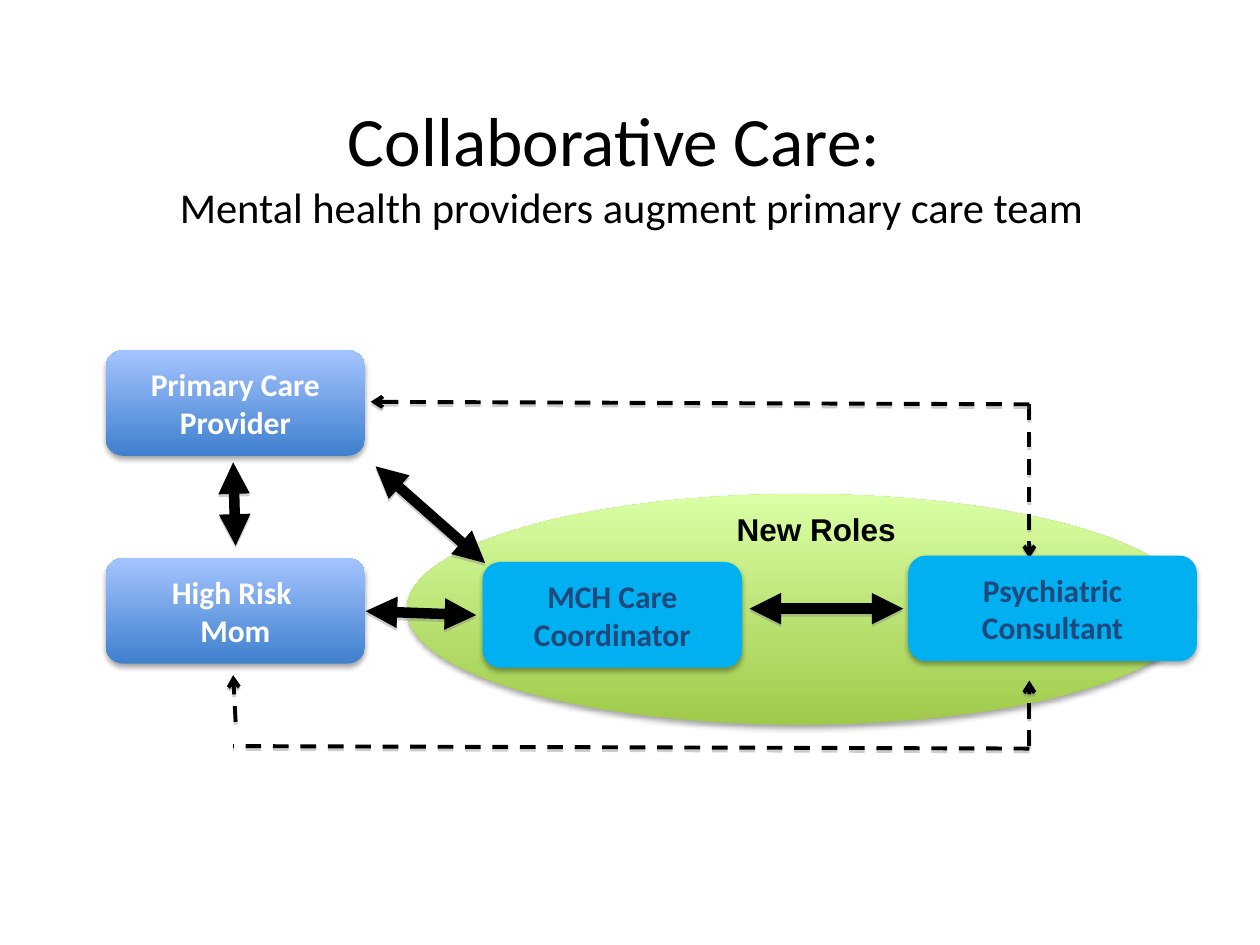
"""Build the collaborative care slide: a care team diagram with new roles."""
from lxml import etree
from pptx import Presentation, util as u
from pptx.dml.color import RGBColor
from pptx.enum import dml, shapes, text
from pptx.oxml import ns

HUES = {
    "ink": "000000", "white": "FFFFFF", "navy": "1F497D", "cyan": "00B0F0",
    "blue": ("3F80CE", "A4C4FF"), "green": ("A0CA4A", "DAFFA5"),
    "shade": "000000", "gray": "808080",
}
TITLE = [("Collaborative Care:", 39.6, 0.7),
         ("Mental health providers augment primary care team", 24.3, 0)]
TITLE_AT = (1.3, 1.73, 22.86, 3.18)
OVAL = (8.2, 9.96, 15.88, 4.65)
LABEL = ("New Roles", (14.6, 10.16, 4.01, 1.02))
WIDE, HIGH = 5.23, 2.13
BOXES = [
    ("Primary Care\nProvider", 2.13, 7.06, WIDE, "blue", "white"),
    ("High Risk \nMom", 2.13, 11.25, WIDE, "blue", "white"),
    ("MCH Care\nCoordinator", 9.73, 11.33, WIDE, "cyan", "navy"),
    ("Psychiatric Consultant", 18.31, 11.2, 5.82, "cyan", "navy"),
]
BACK = [
    ("thick", 7.57, 9.4, 9.78, 11.35),
    ("dash", 20.75, 8.15, 20.75, 11.25),
]
FRONT = [
    ("dash", 20.75, 8.15, 7.47, 8.1),
    ("thick", 4.75, 11, 4.7, 9.32),
    ("thick", 7.37, 12.32, 9.6, 12.4),
    ("thick", 15.11, 12.27, 18.21, 12.27),
    ("dash", 20.75, 15.04, 20.75, 13.72),
    ("plain", 20.75, 15.09, 4.7, 15.04),
    ("dash", 4.75, 14.55, 4.7, 13.61),
]
ENDS = {
    "thick": {"headEnd": "triangle", "tailEnd": "triangle"},
    "dash": {"tailEnd": "arrow"},
    "plain": {},
}


def rgb(name):
    return RGBColor.from_string(HUES[name])


def cms(vals):
    return [u.Cm(v) for v in vals]


def sub(node, tag, **atts):
    return etree.SubElement(node, ns.qn("a:" + tag), **atts)


def shade(item, hue, alpha, blur, dist):
    root = sub(item._element.spPr, "effectLst")
    cast = sub(root, "outerShdw", blurRad=str(u.Pt(blur)), dist=str(u.Pt(dist)),
               dir="5400000", rotWithShape="0")
    tint = sub(cast, "srgbClr", val=HUES[hue])
    sub(tint, "alpha", val=str(alpha * 1000))


def style(para, size, hue, face="Calibri", bold=False):
    for run in para.runs:
        font = run.font
        font.name, font.size, font.bold = face, u.Pt(size), bold
        font.color.rgb = rgb(hue)


def add_form(slide, kind, spot, hue):
    form = slide.shapes.add_shape(kind, *cms(spot))
    if isinstance(HUES[hue], tuple):
        form.fill.gradient()
        form.fill.gradient_angle = 90
        for stop, code, pos in zip(form.fill.gradient_stops, HUES[hue], (0, 1)):
            stop.color.rgb = RGBColor.from_string(code)
            stop.position = pos
    else:
        form.fill.solid()
        form.fill.fore_color.rgb = rgb(hue)
    form.line.fill.background()
    shade(form, "shade", 35, 3.1, 1.8)
    return form


def add_box(slide, words, left, top, wide, hue, ink):
    kind = shapes.MSO_SHAPE.ROUNDED_RECTANGLE
    frame = add_form(slide, kind, (left, top, wide, HIGH), hue).text_frame
    frame.text = words
    frame.word_wrap = True
    frame.vertical_anchor = text.MSO_ANCHOR.MIDDLE
    for para in frame.paragraphs:
        para.alignment = text.PP_ALIGN.CENTER
        style(para, 18, ink, bold=True)


def add_line(slide, kind, *ends):
    link = slide.shapes.add_connector(shapes.MSO_CONNECTOR.STRAIGHT, *cms(ends))
    line = link.line
    line.color.rgb = rgb("ink")
    line.width = u.Pt(6 if kind == "thick" else 2.25)
    if kind != "thick":
        line.dash_style = dml.MSO_LINE.DASH
    for tag, tip in ENDS[kind].items():
        sub(line._get_or_add_ln(), tag, type=tip)
    shade(link, "gray", 38, 0, 1.6)


def add_title(slide):
    frame = slide.shapes.add_textbox(*cms(TITLE_AT)).text_frame
    frame.word_wrap = True
    frame.vertical_anchor = text.MSO_ANCHOR.MIDDLE
    frame.text = "\n".join(row[0] for row in TITLE)
    for para, (_, size, inset) in zip(frame.paragraphs, TITLE):
        para.alignment = text.PP_ALIGN.CENTER
        para._p.get_or_add_pPr().set("marR", str(u.Cm(inset)))
        style(para, size, "ink")


def add_label(slide):
    words, spot = LABEL
    frame = slide.shapes.add_textbox(*cms(spot)).text_frame
    frame.text = words
    frame.word_wrap = True
    style(frame.paragraphs[0], 18, "ink", "Arial", True)


def main():
    deck = Presentation()
    deck.slide_width, deck.slide_height = cms((25.4, 19.05))
    slide = deck.slides.add_slide(deck.slide_layouts[6])
    add_form(slide, shapes.MSO_SHAPE.OVAL, OVAL, "green")
    add_title(slide)
    for row in BACK:
        add_line(slide, *row)
    for row in BOXES:
        add_box(slide, *row)
    for row in FRONT:
        add_line(slide, *row)
    add_label(slide)
    deck.save("out.pptx")


if __name__ == "__main__":
    main()
